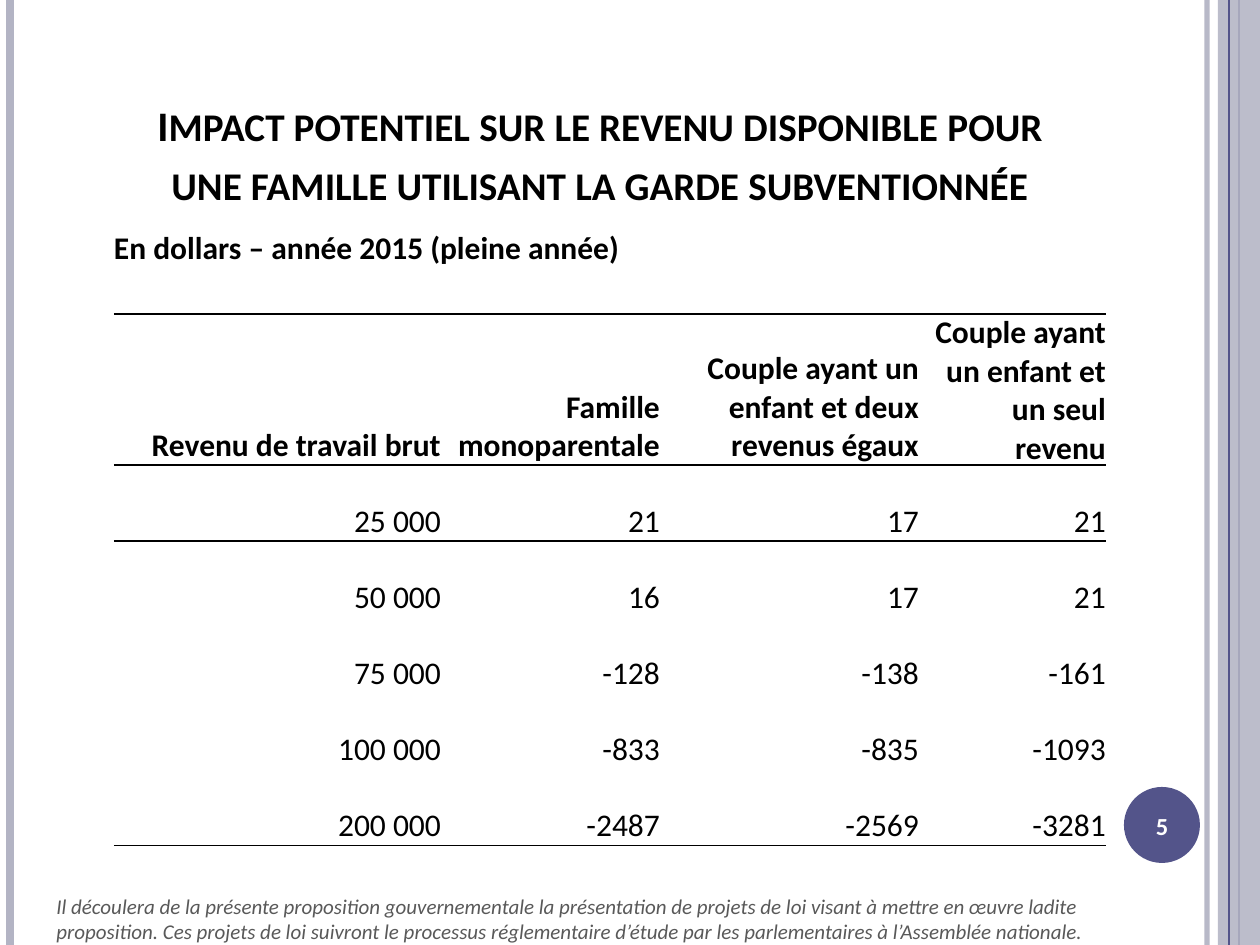
import lxml.etree
import pptx
import pptx.util
import pptx.dml.color
import pptx.enum.shapes
import pptx.enum.text
import pptx.oxml
import pptx.oxml.ns

BLACK = pptx.dml.color.RGBColor(0x00, 0x00, 0x00)
WHITE = pptx.dml.color.RGBColor(0xFF, 0xFF, 0xFF)
GREY = pptx.dml.color.RGBColor(0x59, 0x59, 0x59)
LILAC = pptx.dml.color.RGBColor(0xB3, 0xB4, 0xC4)
INDIGO = pptx.dml.color.RGBColor(0x53, 0x54, 0x8A)

HEADING = ("I", "mpact potentiel sur le revenu disponible pour une famille "
           "utilisant la garde subventionnée")
UNITS = "En dollars – année 2015 (pleine année)"
HEADERS = ["Revenu de travail brut", " Famille monoparentale",
           "Couple ayant un enfant et deux revenus égaux",
           "Couple ayant un enfant et un seul revenu"]
INCOMES = [
    ("25 000", "21", "17", "21"),
    ("50 000", "16", "17", "21"),
    ("75 000", "-128", "-138", "-161"),
    ("100 000", "-833", "-835", "-1093"),
    ("200 000", "-2487", "-2569", "-3281"),
]
NOTICE = ("Il découlera de la présente proposition gouvernementale la présentation de "
          "projets de loi visant à mettre en œuvre ladite proposition. Ces projets de loi "
          "suivront le processus réglementaire d’étude par les parlementaires à "
          "l’Assemblée nationale.")
PAGE = "5"

RULES_BEHIND_BAND = [(1207, LILAC, 3, 93), (10, LILAC, 4.5, 100), (1239, INDIGO, 1.5, 100)]
RULE_ON_BAND = (1229, INDIGO, 0.75, 100)
COLUMNS = [327, 219, 259, 187]
ROWS = [93, 46, 142] + [76] * len(INCOMES)
RULE_BELOW = {1: 1.5, 2: 1, len(ROWS) - 1: 0.5}
NO_STYLE = "{2D5ABB26-0587-4C30-8999-92F81FD0307C}"

PAGE_W, PAGE_H = 1260, 945
ALIGN = pptx.enum.text.PP_ALIGN
ANCHOR = pptx.enum.text.MSO_ANCHOR
SHAPE = pptx.enum.shapes.MSO_SHAPE


def px(length):
    return pptx.util.Emu(length * 914400 // 126)


def box(*lengths):
    return [px(length) for length in lengths]


def write(paragraph, text, size, color, bold=False, italic=False, align=ALIGN.LEFT):
    paragraph.alignment = align
    run = paragraph.add_run()
    run.text = text
    run.font.name = "Calibri"
    run.font.size = pptx.util.Pt(size)
    run.font.bold = bold
    run.font.italic = italic
    run.font.color.rgb = color
    return run


def set_alpha(properties, percent):
    for color in properties.iter(pptx.oxml.ns.qn("a:srgbClr")):
        alpha = lxml.etree.SubElement(color, pptx.oxml.ns.qn("a:alpha"))
        alpha.set("val", str(percent * 1000))


def add_rule(slide, x, color, width, opacity):
    rule = slide.shapes.add_connector(
        pptx.enum.shapes.MSO_CONNECTOR.STRAIGHT, *box(x, 0, x, PAGE_H))
    rule.line.color.rgb = color
    rule.line.width = pptx.util.Pt(width)
    properties = rule._element.spPr
    if opacity < 100:
        set_alpha(properties, opacity)
    lxml.etree.SubElement(properties, pptx.oxml.ns.qn("a:effectLst"))


def add_solid(slide, kind, bounds, color):
    solid = slide.shapes.add_shape(kind, *box(*bounds))
    solid.shadow.inherit = False
    solid.fill.solid()
    solid.fill.fore_color.rgb = color
    solid.line.fill.background()
    return solid


def add_text(slide, bounds, text, size, color, **style):
    frame = slide.shapes.add_textbox(*box(*bounds)).text_frame
    frame.word_wrap = True
    frame.vertical_anchor = ANCHOR.MIDDLE
    write(frame.paragraphs[0], text, size, color, **style)


def add_border(cell, tag, width):
    border = pptx.oxml.parse_xml(
        f'<a:{tag} {pptx.oxml.ns.nsdecls("a")} w="{pptx.util.Pt(width)}">'
        f'<a:solidFill><a:srgbClr val="{BLACK}"/></a:solidFill></a:{tag}>')
    cell._tc.get_or_add_tcPr().insert(0, border)


def add_income_table(slide):
    table = slide.shapes.add_table(
        len(ROWS), len(COLUMNS), *box(114, 175, sum(COLUMNS), sum(ROWS))).table
    table.first_row = table.horz_banding = False
    table._tbl.tblPr.find(pptx.oxml.ns.qn("a:tableStyleId")).text = NO_STYLE
    for column, width in zip(table.columns, COLUMNS):
        column.width = px(width)
    for row, height in zip(table.rows, ROWS):
        row.height = px(height)
    content = [[UNITS, "", "", ""], [""] * 4, HEADERS, *INCOMES]
    for r, texts in enumerate(content):
        for c, text in enumerate(texts):
            cell = table.cell(r, c)
            cell.fill.background()
            cell.vertical_anchor = ANCHOR.BOTTOM
            cell.margin_left = cell.margin_right = 0
            cell.margin_top = cell.margin_bottom = 0
            if text:
                write(cell.text_frame.paragraphs[0], text, 18, BLACK, bold=r < 3,
                      align=ALIGN.RIGHT if r else ALIGN.LEFT)
            for tag, edge in (("lnB", r), ("lnT", r - 1)):
                if edge in RULE_BELOW:
                    add_border(cell, tag, RULE_BELOW[edge])
    table.cell(0, 0).merge(table.cell(0, len(COLUMNS) - 1))


def add_title(slide):
    title = slide.shapes.title
    title.left, title.top, title.width, title.height = box(134, 86, 932, 131)
    frame = title.text_frame
    frame.word_wrap = True
    frame.vertical_anchor = ANCHOR.TOP
    frame.auto_size = pptx.enum.text.MSO_AUTO_SIZE.SHAPE_TO_FIT_TEXT
    initial, rest = HEADING
    heading = frame.paragraphs[0]
    write(heading, initial, 24, BLACK, bold=True, align=ALIGN.CENTER)
    small_caps = write(heading, rest, 28, BLACK, bold=True, align=ALIGN.CENTER)
    small_caps.font._element.set("cap", "small")


def main():
    deck = pptx.Presentation()
    deck.slide_width, deck.slide_height = box(PAGE_W, PAGE_H)
    slide = deck.slides.add_slide(deck.slide_layouts[5])
    for rule in RULES_BEHIND_BAND:
        add_rule(slide, *rule)
    band = add_solid(slide, SHAPE.RECTANGLE, (1218, 0, 42, PAGE_H), LILAC)
    set_alpha(band._element.spPr, 87)
    add_rule(slide, *RULE_ON_BAND)
    add_solid(slide, SHAPE.OVAL, (1124, 787, 76, 76), INDIGO)
    add_title(slide)
    add_income_table(slide)
    add_text(slide, (44, 892, 1131, 53), NOTICE, 12, GREY, italic=True)
    add_text(slide, (1120, 790, 84, 72), PAGE, 14, WHITE, bold=True, align=ALIGN.CENTER)
    deck.save("out.pptx")


if __name__ == "__main__":
    main()
